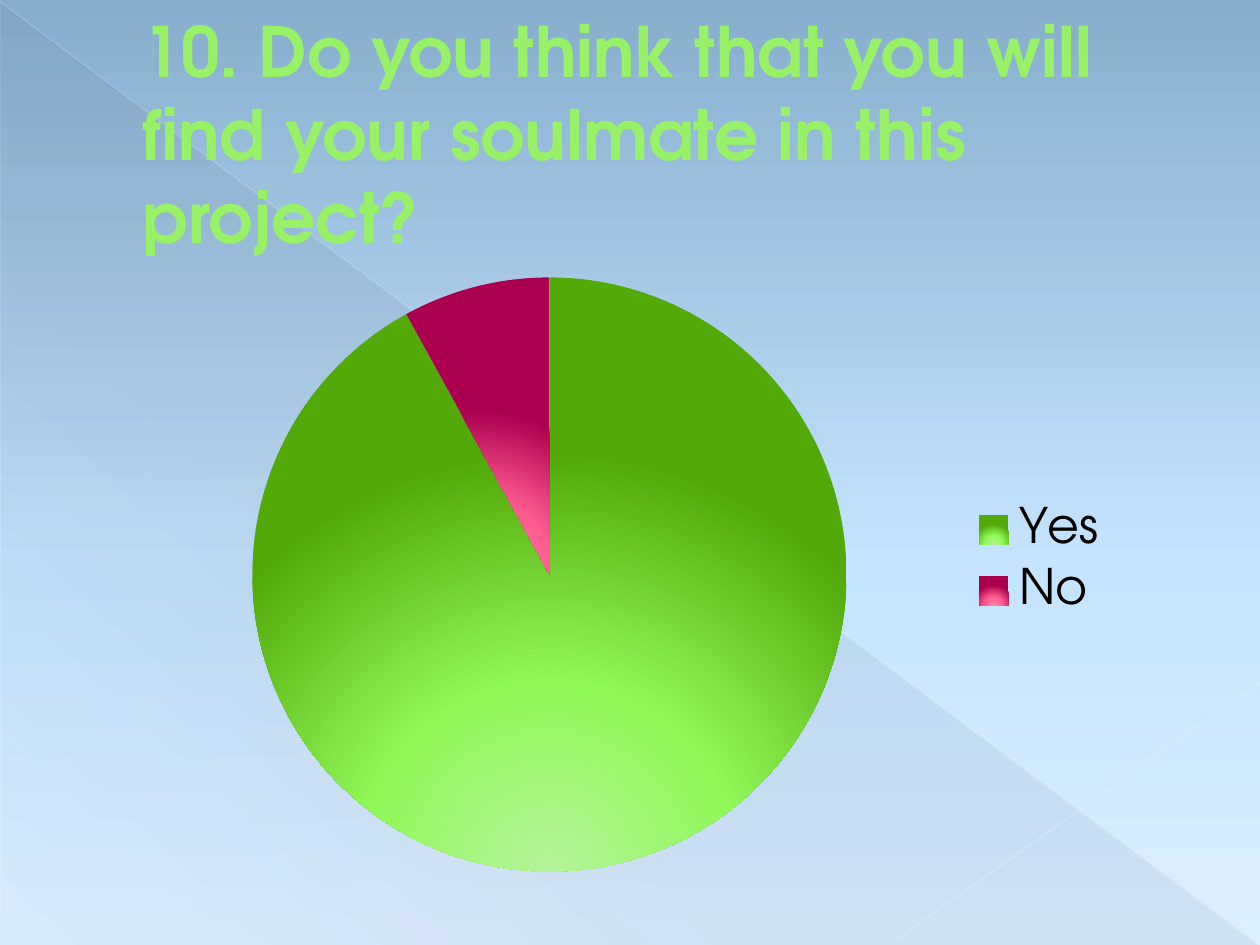
from dataclasses import dataclass
from lxml import etree
from pptx import Presentation
from pptx import util as u
from pptx.chart.data import CategoryChartData
from pptx.dml.color import RGBColor
from pptx.enum import chart as charts, shapes, text
from pptx.oxml import parse_xml
from pptx.oxml.ns import nsdecls, qn

# Content
QUESTION = "10. Do you think that you will find your soulmate in this project?"
ANSWERS = {"Yes": 92, "No": 8}


@dataclass(frozen=True)
class Theme:
    font: str = "TeX Gyre Adventor"
    title_color: str = "98F167"
    title_outline: str = "589129"
    text_color: str = "000000"
    title_size: float = 39.6
    chart_size: float = 18
    legend_size: float = 28
    # Gradient stops: position %, colour, opacity %
    sky: tuple = ((0, "88ADCD", 100), (60, "C5E4FF", 100), (100, "DDEFFF", 100))
    shade: tuple = ((0, "4E5B6F", 10), (70, "4E5B6F", 8), (100, "4E5B6F", 1))
    slices: tuple = (
        ((0, "B5F39A", 100), (45, "90F857", 100), (100, "52A908", 100)),
        ((0, "FF8CA8", 100), (45, "FF5C92", 100), (100, "AB004F", 100)),
    )


THEME = Theme()

# Places: left, top, width, height
TITLE_BOX = (0.5, 0.29, 9, 1.53)
CHART_BOX = (0.5, 2.06, 9, 5)
PIE_BOX = (2, 2.2, 4.72, 4.72)
LEGEND_BOX = (7.65, 3.9, 1.2, 1.1)
SHADE_BOX = (0.01, 0.02, 9.98, 7.48)
# Rays: start, end, colour, width in points, opacity %
RAYS = [
    ((0, 0.01), (9.99, 7.49), "EAF5FF", 0.39, 35),
    ((10, 5.41), (7.07, 7.49), "ECF6FF", 0.47, 45),
]


def inches(values):
    return [u.Inches(value) for value in values]


def apply(target, formats):
    for name, value in formats.items():
        setattr(target, name, value)


def color_xml(color, opacity=100):
    return f'<a:srgbClr val="{color}"><a:alpha val="{opacity * 1000}"/></a:srgbClr>'


def set_gradient(fill, parent, stops, angle=None):
    """Linear at an angle, or radial from the bottom centre without one."""
    fill.gradient()
    stops_xml = "".join(
        f'<a:gs pos="{at * 1000}">{color_xml(color, opacity)}</a:gs>'
        for at, color, opacity in stops)
    if angle is None:
        course = ('<a:path path="circle"><a:fillToRect l="50000" t="100000" '
                  'r="50000" b="0"/></a:path>')
    else:
        course = f'<a:lin ang="{angle * 60000}" scaled="0"/>'
    gradient = parse_xml(f'<a:gradFill {nsdecls("a")} rotWithShape="1">'
                         f'<a:gsLst>{stops_xml}</a:gsLst>{course}</a:gradFill>')
    default = parent.find(qn("a:gradFill"))
    parent.replace(default, gradient)


def layout_xml(box, inner=False):
    left, top, width, height = CHART_BOX
    shares = {"x": (box[0] - left) / width, "y": (box[1] - top) / height,
              "w": box[2] / width, "h": box[3] / height}
    target = '<c:layoutTarget val="inner"/>' if inner else ""
    modes = '<c:xMode val="edge"/><c:yMode val="edge"/>'
    sizes = "".join(f'<c:{key} val="{share:.3f}"/>' for key, share in shares.items())
    return parse_xml(f'<c:layout {nsdecls("c")}><c:manualLayout>{target}{modes}{sizes}'
                     '</c:manualLayout></c:layout>')


def draw_backdrop(slide):
    background = slide.background.fill
    set_gradient(background, slide.element.find(".//" + qn("p:bgPr")), THEME.sky, 90)
    shade = slide.shapes.add_shape(shapes.MSO_SHAPE.RIGHT_TRIANGLE, *inches(SHADE_BOX))
    shade.shadow.inherit = False
    shade.line.fill.background()
    set_gradient(shade.fill, shade.element.spPr, THEME.shade, 133)
    for start, end, color, width, opacity in RAYS:
        ray = slide.shapes.add_connector(shapes.MSO_CONNECTOR.STRAIGHT,
                                         *inches(start + end))
        ray.line.width = u.Pt(width)
        ray.line.color.rgb = RGBColor.from_string(color)
        tint = ray.element.spPr.find(".//" + qn("a:srgbClr"))
        etree.SubElement(tint, qn("a:alpha"), val=str(opacity * 1000))
        etree.SubElement(ray.element.spPr, qn("a:effectLst"))


def write_title(slide):
    title = slide.shapes.title
    apply(title, dict(zip(("left", "top", "width", "height"), inches(TITLE_BOX))))
    apply(title.text_frame, {"text": QUESTION, "word_wrap": True,
                             "auto_size": text.MSO_AUTO_SIZE.NONE,
                             "vertical_anchor": text.MSO_ANCHOR.MIDDLE})
    question = title.text_frame.paragraphs[0]
    question.alignment = text.PP_ALIGN.LEFT
    indent = question._p.get_or_add_pPr()
    indent.set("marL", str(u.Inches(0.53)))
    indent.set("indent", "0")
    font = question.runs[0].font
    apply(font, {"name": THEME.font, "size": u.Pt(THEME.title_size), "bold": True})
    font.color.rgb = RGBColor.from_string(THEME.title_color)
    font._element.insert(0, parse_xml(
        f'<a:ln {nsdecls("a")} w="{u.Pt(0.5)}"><a:solidFill>'
        f'{color_xml(THEME.title_outline)}</a:solidFill></a:ln>'))
    # Bring the title in front of the backdrop
    slide.shapes._spTree.append(title.element)


def draw_chart(slide):
    data = CategoryChartData()
    data.categories = list(ANSWERS)
    data.add_series("Series 1", list(ANSWERS.values()))
    chart = slide.shapes.add_chart(charts.XL_CHART_TYPE.PIE, *inches(CHART_BOX), data).chart
    apply(chart, {"has_title": False, "has_legend": True})
    apply(chart.font, {"name": THEME.font, "size": u.Pt(THEME.chart_size)})
    chart.font.color.rgb = RGBColor.from_string(THEME.text_color)

    # Slices
    pie = chart.plots[0]
    apply(pie, {"vary_by_categories": True, "has_data_labels": False})
    for index, stops in enumerate(THEME.slices):
        slice_format = pie.series[0].points[index].format
        slice_format.line.fill.background()
        slice_fill = slice_format.fill
        slice_fill.gradient()
        point = pie.series[0]._element.findall(qn("c:dPt"))[index]
        set_gradient(slice_fill, point.find(qn("c:spPr")), stops)

    # Legend
    legend = chart.legend
    apply(legend, {"position": charts.XL_LEGEND_POSITION.RIGHT,
                   "include_in_layout": False})
    apply(legend.font, {"name": THEME.font, "size": u.Pt(THEME.legend_size)})
    legend.font.color.rgb = RGBColor.from_string(THEME.text_color)

    # Fixed places inside the chart
    plot_area = chart._chartSpace.find(".//" + qn("c:plotArea"))
    for parent in (plot_area, legend._element):
        for automatic in parent.findall(qn("c:layout")):
            parent.remove(automatic)
    plot_area.insert(0, layout_xml(PIE_BOX, inner=True))
    legend._element.find(qn("c:legendPos")).addnext(layout_xml(LEGEND_BOX))


def main():
    deck = Presentation()
    apply(deck, {"slide_width": u.Inches(10), "slide_height": u.Inches(7.5)})
    slide = deck.slides.add_slide(deck.slide_layouts[5])
    draw_backdrop(slide)
    write_title(slide)
    draw_chart(slide)
    deck.save("out.pptx")


if __name__ == "__main__":
    main()
